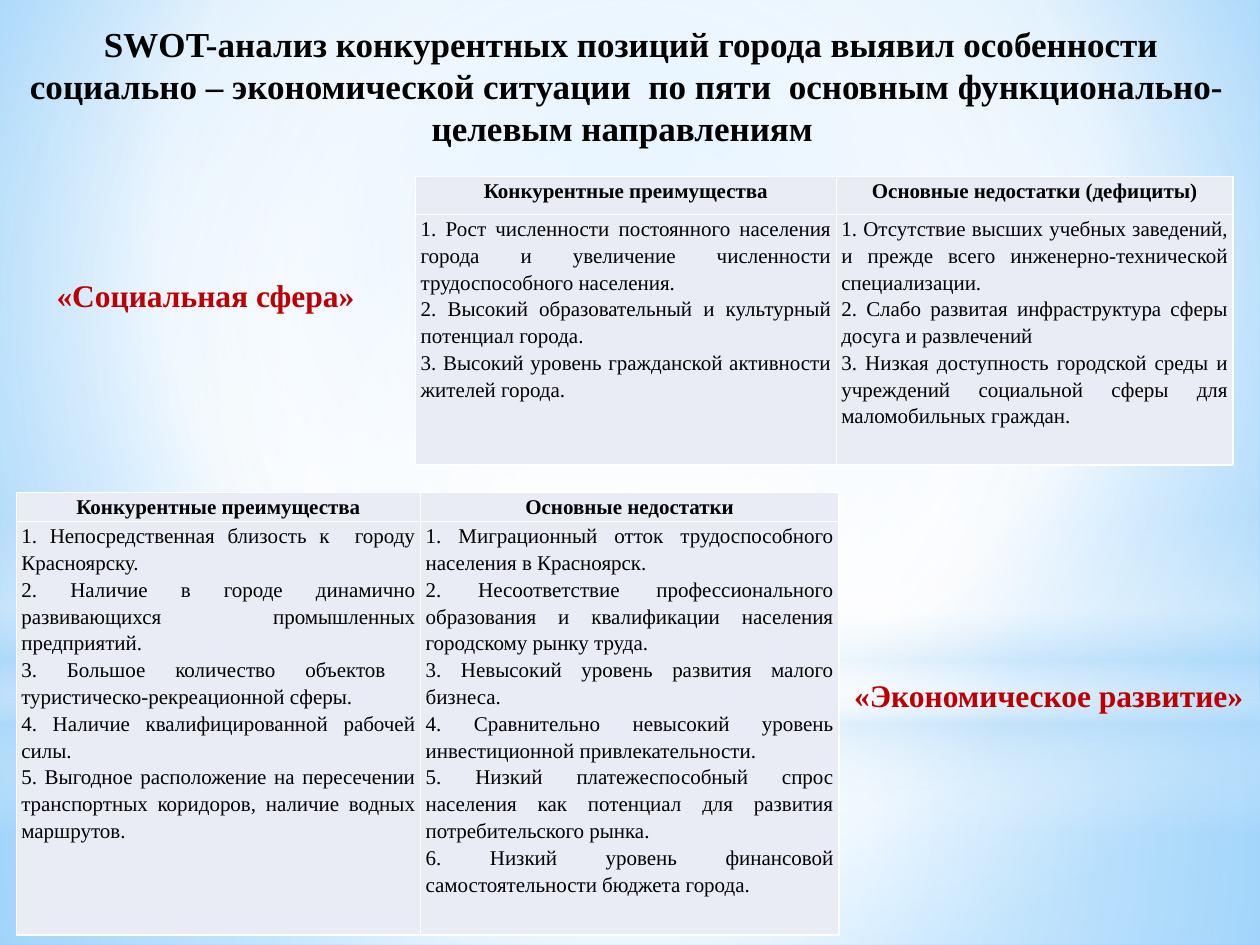
from lxml import etree
from pptx import Presentation
from pptx import util as u
from pptx.dml.color import RGBColor
from pptx.enum import shapes, text
from pptx.oxml import ns

FONT = "Times New Roman"
BLACK, WHITE, RED, LAVENDER = "000000", "FFFFFF", "C00000", "E9EBF5"
SKY = "B4DCFA"
CENTER = (50, 50, 50, 50)

TITLE = ("\u00a0SWOT-анализ конкурентных позиций города выявил особенности "
         "социально – экономической ситуации  по пяти  основным "
         "функционально-целевым направлениям ")

SOCIAL = {
    "Конкурентные преимущества": [
        "1. Рост численности постоянного населения города и увеличение "
        "численности трудоспособного населения.",
        "2. Высокий образовательный и культурный потенциал города.",
        "3. Высокий уровень гражданской активности жителей города.",
    ],
    "Основные недостатки (дефициты)": [
        "1. Отсутствие высших учебных заведений, и прежде всего "
        "инженерно-технической специализации.",
        "2. Слабо развитая инфраструктура сферы досуга и развлечений",
        "3. Низкая доступность городской среды и учреждений социальной "
        "сферы для маломобильных граждан.",
    ],
}

ECONOMY = {
    "Конкурентные преимущества": [
        "1. Непосредственная близость к  городу Красноярску.",
        "2. Наличие в городе динамично развивающихся промышленных предприятий.",
        "3. Большое количество объектов  туристическо-рекреационной сферы.",
        "4. Наличие квалифицированной рабочей силы.",
        "5. Выгодное расположение на пересечении транспортных коридоров, "
        "наличие водных маршрутов.",
    ],
    "Основные недостатки": [
        "1. Миграционный отток трудоспособного населения в Красноярск.",
        "2. Несоответствие профессионального образования и квалификации "
        "населения городскому рынку труда.",
        "3. Невысокий уровень развития малого бизнеса.",
        "4. Сравнительно невысокий уровень инвестиционной привлекательности.",
        "5. Низкий платежеспособный спрос населения как потенциал для "
        "развития потребительского рынка.",
        "6. Низкий уровень финансовой самостоятельности бюджета города.",
    ],
}


def rgb(value):
    return RGBColor.from_string(value)


def add_xml(parent, tag, **attrs):
    el = etree.SubElement(parent, ns.qn(tag))
    for name, value in attrs.items():
        el.set(name, str(value))
    return el


def set_gradient(props, stops, focus=None):
    old = props.find(ns.qn("a:solidFill"))
    grad = etree.Element(ns.qn("a:gradFill"), rotWithShape="1")
    stop_list = add_xml(grad, "a:gsLst")
    for pos, color, opacity in stops:
        gs = add_xml(stop_list, "a:gs", pos=pos * 1000)
        clr = add_xml(gs, "a:srgbClr", val=color)
        if opacity < 100:
            add_xml(clr, "a:alpha", val=opacity * 1000)
    if focus:
        path = add_xml(grad, "a:path", path="circle")
        add_xml(path, "a:fillToRect",
                **{side: v * 1000 for side, v in zip("ltrb", focus)})
    else:
        add_xml(grad, "a:lin", ang=90 * 60000, scaled=0)
    props.replace(old, grad)


def set_background(s):
    fill = s.background.fill
    fill.solid()
    fill.fore_color.rgb = rgb(WHITE)
    props = s.element.find(".//" + ns.qn("p:bgPr"))
    set_gradient(props, [(0, "9ED5FF", 100), (60, WHITE, 100), (100, "5BB9FF", 100)],
                 (20, 10, 20, 60))


def add_glow(s, kind, top, height, stops, focus=None):
    sp = s.shapes.add_shape(kind, 0, u.Cm(top), u.Cm(25.4), u.Cm(height))
    sp.shadow.inherit = False
    sp.line.fill.background()
    sp.fill.solid()
    set_gradient(sp.element.spPr, stops, focus)


def format_paragraph(p, size, color, bold, align=None):
    p.font.name = FONT
    p.font.size = u.Pt(size)
    p.font.bold = bold
    p.font.color.rgb = rgb(color)
    p.alignment = align


def format_title(s):
    sp = s.shapes.title
    sp.left, sp.top, sp.width, sp.height = map(u.Cm, (0.33, 0.33, 24.61, 2.82))
    tf = sp.text_frame
    tf.text = TITLE
    tf.word_wrap = True
    tf.auto_size = text.MSO_AUTO_SIZE.SHAPE_TO_FIT_TEXT
    tf.vertical_anchor = text.MSO_ANCHOR.TOP
    format_paragraph(tf.paragraphs[0], 20, BLACK, True, text.PP_ALIGN.CENTER)
    sp.element.getparent().append(sp.element)


def add_label(s, label, left, top, width):
    sp = s.shapes.add_textbox(u.Cm(left), u.Cm(top), u.Cm(width), u.Cm(1.02))
    tf = sp.text_frame
    tf.text = label
    tf.word_wrap = False
    tf.auto_size = text.MSO_AUTO_SIZE.SHAPE_TO_FIT_TEXT
    format_paragraph(tf.paragraphs[0], 18, RED, True)


def set_borders(cell):
    props = cell._tc.get_or_add_tcPr()
    for i, side in enumerate("LRTB"):
        ln = etree.Element(ns.qn("a:ln" + side), w=str(u.Pt(1)))
        add_xml(add_xml(ln, "a:solidFill"), "a:srgbClr", val=WHITE)
        props.insert(i, ln)


def fill_cell(cell, lines, header, space_after=0):
    cell.margin_left = cell.margin_right = u.Cm(0.1)
    cell.margin_top = cell.margin_bottom = 0
    cell.fill.solid()
    cell.fill.fore_color.rgb = rgb(LAVENDER)
    set_borders(cell)
    cell.text = "\n".join(lines)
    align = text.PP_ALIGN.CENTER if header else text.PP_ALIGN.JUSTIFY
    for p in cell.text_frame.paragraphs:
        format_paragraph(p, 12, BLACK, header, align)
        p.line_spacing = 1.15
        p.space_after = u.Pt(space_after)


def add_swot_table(s, content, left, top, widths, heights, header_space=0):
    table = s.shapes.add_table(2, 2, u.Cm(left), u.Cm(top),
                               u.Cm(sum(widths)), u.Cm(sum(heights))).table
    table.horz_banding = False
    for row, height in zip(table.rows, heights):
        row.height = u.Cm(height)
    for i, (heading, points) in enumerate(content.items()):
        table.columns[i].width = u.Cm(widths[i])
        fill_cell(table.cell(0, i), [heading], True, header_space)
        fill_cell(table.cell(1, i), points, False)


def main():
    prs = Presentation()
    prs.slide_width, prs.slide_height = u.Cm(25.4), u.Cm(19.05)
    s = prs.slides.add_slide(prs.slide_layouts[5])
    set_background(s)

    rect, oval = shapes.MSO_SHAPE.RECTANGLE, shapes.MSO_SHAPE.OVAL
    add_glow(s, rect, 14.17, 4.88,
             [(0, WHITE, 91), (37, WHITE, 76), (100, SKY, 79)], CENTER)
    add_glow(s, rect, 0, 14.17,
             [(0, WHITE, 89), (48, WHITE, 62), (100, SKY, 79)], CENTER)
    add_glow(s, rect, 10.46, 6.35,
             [(0, WHITE, 0), (29, WHITE, 30), (45, SKY, 40),
              (55, WHITE, 26), (65, SKY, 60), (100, WHITE, 0)])
    add_glow(s, oval, 4.45, 14.17, [(0, WHITE, 100), (56, WHITE, 0)], CENTER)

    format_title(s)
    add_swot_table(s, SOCIAL, 8.38, 3.56, (8.48, 8), (0.76, 5.05), 10)
    add_swot_table(s, ECONOMY, 0.33, 9.93, (8.15, 8.43), (0.58, 8.33))
    add_label(s, "«Экономическое развитие»", 16.97, 13.51, 8.43)
    add_label(s, "«Социальная сфера»", 0.89, 5.44, 6.58)
    prs.save("out.pptx")


if __name__ == "__main__":
    main()
